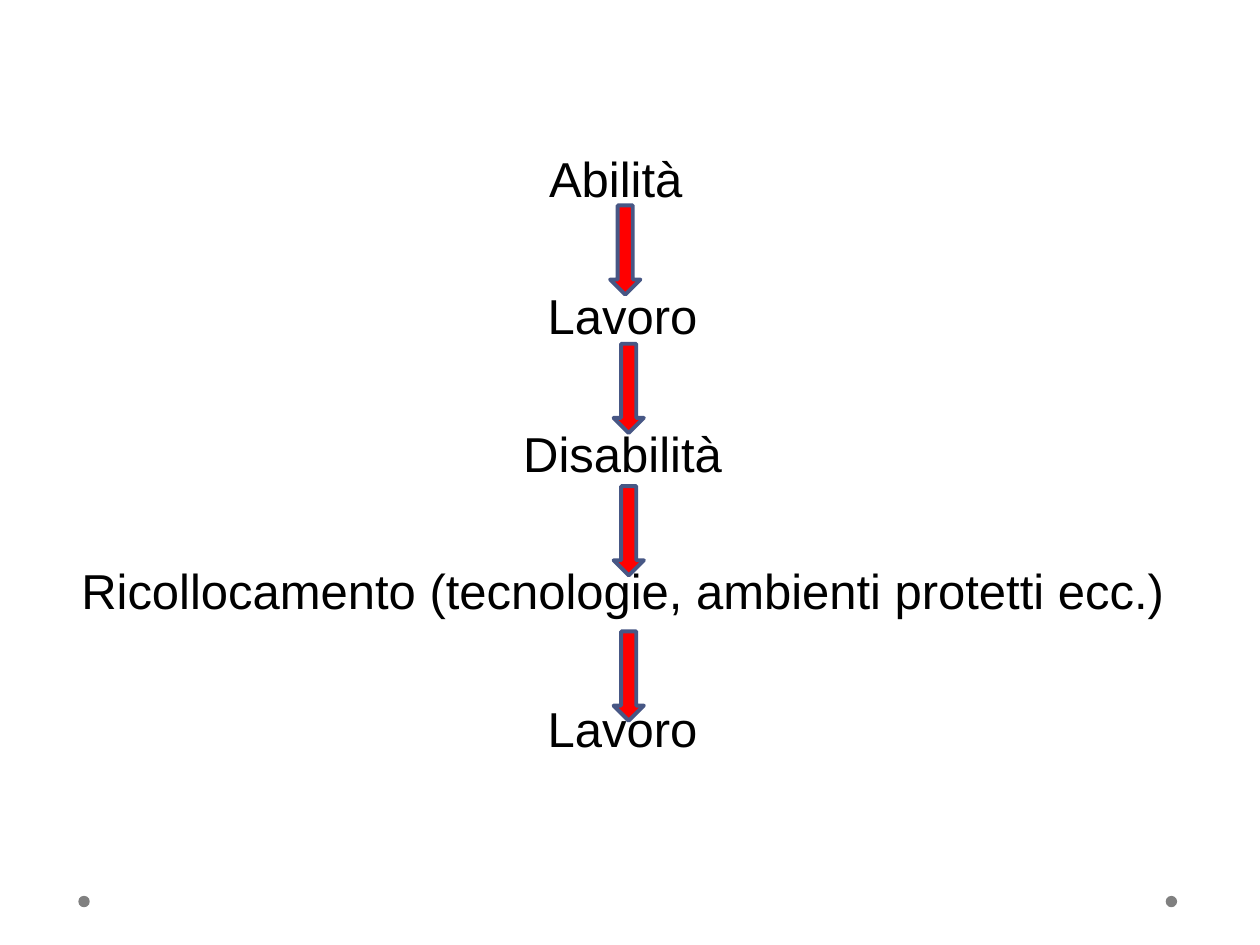
from pptx import Presentation
from pptx.dml.color import RGBColor
from pptx.enum.shapes import MSO_SHAPE
from pptx.enum.text import PP_ALIGN
from pptx.util import Cm, Pt

BLACK = RGBColor(0x00, 0x00, 0x00)
RED = RGBColor(0xFF, 0x00, 0x00)
BLUE = RGBColor(0x47, 0x57, 0x85)
GREY = RGBColor(0x80, 0x80, 0x80)

STEPS = [
    "Abilità ",
    "Lavoro",
    "Disabilità",
    "Ricollocamento (tecnologie, ambienti protetti ecc.)",
    "Lavoro",
]
ARROWS = [(12.3, 4.14), (12.37, 6.93), (12.37, 9.8), (12.37, 12.73)]

deck = Presentation()
deck.slide_width = Cm(25.4)
deck.slide_height = Cm(19.05)
page = deck.slides.add_slide(deck.slide_layouts[6])

for left in (1.58, 23.5):
    dot = page.shapes.add_shape(MSO_SHAPE.OVAL, Cm(left), Cm(18.06), Cm(0.23), Cm(0.23))
    dot.shadow.inherit = False
    dot.fill.solid()
    dot.fill.fore_color.rgb = GREY
    dot.line.fill.background()

box = page.shapes.add_textbox(Cm(1.12), Cm(2.87), Cm(22.86), Cm(12.57))
frame = box.text_frame
frame.word_wrap = True
for index, step in enumerate(STEPS):
    para = frame.add_paragraph() if index else frame.paragraphs[0]
    para.alignment = PP_ALIGN.CENTER
    if index:
        para.space_before = Pt(44.9)
    span = para.add_run()
    span.text = step
    span.font.name = "Arial"
    span.font.size = Pt(28)
    span.font.color.rgb = BLACK

for left, top in ARROWS:
    arrow = page.shapes.add_shape(MSO_SHAPE.DOWN_ARROW, Cm(left), Cm(top), Cm(0.61), Cm(1.8))
    arrow.shadow.inherit = False
    arrow.fill.solid()
    arrow.fill.fore_color.rgb = RED
    arrow.line.color.rgb = BLUE
    arrow.line.width = Pt(2.25)

deck.save("out.pptx")
